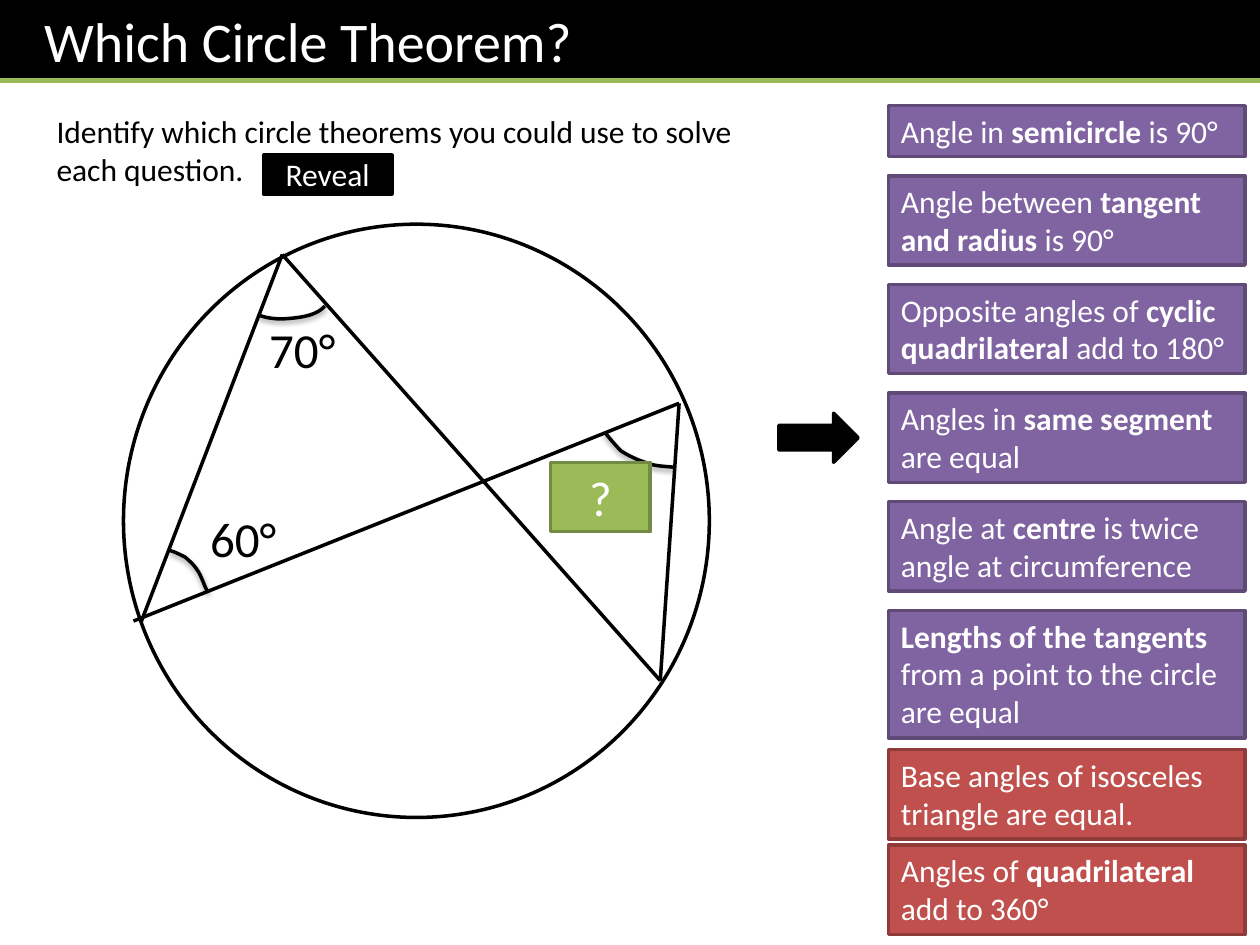
from dataclasses import dataclass

from lxml.etree import SubElement
from pptx import Presentation
from pptx.dml.color import RGBColor
from pptx.enum.shapes import MSO_CONNECTOR, MSO_SHAPE
from pptx.enum.text import MSO_ANCHOR, MSO_AUTO_SIZE, PP_ALIGN
from pptx.oxml.ns import qn
from pptx.util import Cm, Pt


@dataclass(frozen=True)
class Theme:
    font: str = "Calibri"
    black: str = "000000"
    white: str = "FFFFFF"
    green: str = "9BBB59"
    green_edge: str = "738A42"
    purple: str = "8064A2"
    purple_edge: str = "5F4A78"
    red: str = "C0504D"
    red_edge: str = "8E3B39"
    title: int = 32
    label: int = 28
    body: int = 18
    stroke: int = 2


T = Theme()

# Content: runs are (text, bold); lengths are in cm
TITLE = "Which Circle Theorem?"
TASK = "Identify which circle theorems you could use to solve each question."
CIRCLE_THEOREMS = [  # (lines of text, runs)
    (1, [("Angle in ", False), ("semicircle", True), (" is 90°", False)]),
    (2, [("Angle between ", False), ("tangent and radius", True), (" is 90°", False)]),
    (2, [("Opposite angles of ", False), ("cyclic quadrilateral", True),
         (" add to 180°", False)]),
    (2, [("Angles in ", False), ("same segment ", True), ("are equal", False)]),
    (2, [("Angle at ", False), ("centre", True),
         (" is twice angle at circumference", False)]),
    (3, [("Lengths of the tangents ", True),
         ("from a point to the circle are equal", False)]),
]
OTHER_RULES = [
    (2, [("Base angles of isosceles triangle are equal.", False)]),
    (2, [("Angles of ", False), ("quadrilateral", True), (" add to 360°", False)]),
]
THEOREM_GROUPS = [  # (top, gap, fill, edge, theorems)
    (2.13, 0.39, T.purple, T.purple_edge, CIRCLE_THEOREMS),
    (15.11, 0.13, T.red, T.red_edge, OTHER_RULES),
]
BOX_LEFT, BOX_WIDTH = 17.91, 7.19
BOX_PADDING, LINE_HEIGHT = 0.25, 0.775

CIRCLE = (2.49, 4.52, 11.81, 11.96)
TOP, LEFT, RIGHT, BOTTOM = (5.69, 5.13), (2.84, 12.55), (13.69, 8.13), (13.31, 13.72)
CHORDS = [(LEFT, TOP), (RIGHT, (2.69, 12.52)), (BOTTOM, TOP), (BOTTOM, RIGHT)]
ANGLE_LABELS = [("70°", 4.70, 6.32), ("60°", 3.51, 10.13)]
ANGLE_ARCS = [  # chains of cubic curves: start, then two controls and an end each
    [(5.21, 6.35), (5.33, 6.40), (5.49, 6.43), (5.66, 6.43), (5.82, 6.43),
     (6.10, 6.40), (6.25, 6.35), (6.40, 6.30), (6.48, 6.25), (6.55, 6.17)],
    [(3.43, 11.10), (3.53, 11.13), (3.63, 11.18), (3.73, 11.23), (3.81, 11.30),
     (3.91, 11.38), (3.99, 11.51), (4.06, 11.61), (4.11, 11.79), (4.19, 11.94)],
    [(12.19, 8.71), (12.29, 8.84), (12.40, 8.97), (12.52, 9.09), (12.67, 9.19),
     (12.85, 9.27), (13.00, 9.32), (13.18, 9.40), (13.39, 9.40), (13.59, 9.42)],
]


def rgb(color):
    return RGBColor.from_string(color)


def set_line(sp, color, width=T.stroke):
    sp.line.color.rgb = rgb(color)
    sp.line.width = Pt(width)


def add_shape(s, kind, box, fill, edge=None):
    sp = s.shapes.add_shape(kind, *map(Cm, box))
    sp.shadow.inherit = False
    sp.fill.solid()
    sp.fill.fore_color.rgb = rgb(fill)
    if edge:
        set_line(sp, edge)
    else:
        sp.line.fill.background()
    return sp


def write(sp, runs, size, color, align=PP_ALIGN.LEFT, anchor=MSO_ANCHOR.TOP, grow=True):
    tf = sp.text_frame
    tf.word_wrap = True
    tf.vertical_anchor = anchor
    tf.auto_size = MSO_AUTO_SIZE.SHAPE_TO_FIT_TEXT if grow else MSO_AUTO_SIZE.NONE
    p = tf.paragraphs[0]
    p.alignment = align
    for text, bold in runs:
        r = p.add_run()
        r.text = text
        r.font.name = T.font
        r.font.size = Pt(size)
        r.font.bold = bold
        r.font.color.rgb = rgb(color)


def add_text(s, box, text, size, align=PP_ALIGN.LEFT):
    write(s.shapes.add_textbox(*map(Cm, box)), [(text, False)], size, T.black, align)


def add_button(s, box, text, size, fill, edge):
    sp = add_shape(s, MSO_SHAPE.RECTANGLE, box, fill, edge)
    write(sp, [(text, False)], size, T.white, PP_ALIGN.CENTER, MSO_ANCHOR.MIDDLE, False)


def add_line(s, start, end, color, width=T.stroke):
    ln = s.shapes.add_connector(MSO_CONNECTOR.STRAIGHT, *map(Cm, start + end))
    set_line(ln, color, width)
    SubElement(ln._element.spPr, qn("a:effectLst"))


def curve_points(chain, steps=8):
    """Points along a chain of cubic curves."""
    points = [chain[0]]
    for i in range(0, len(chain) - 1, 3):
        for n in range(1, steps + 1):
            t = n / steps
            weights = ((1 - t) ** 3, 3 * t * (1 - t) ** 2, 3 * t * t * (1 - t), t ** 3)
            points.append(tuple(sum(w * q[axis] for w, q in zip(weights, chain[i:i + 4]))
                                for axis in (0, 1)))
    return points


def add_arc(s, chain):
    points = [(Cm(x), Cm(y)) for x, y in curve_points(chain)]
    fb = s.shapes.build_freeform(*points[0])
    fb.add_line_segments(points[1:], close=False)
    sp = fb.convert_to_shape()
    sp.fill.background()
    set_line(sp, T.black)
    sp.shadow.inherit = False
    effects = sp._element.spPr.find(qn("a:effectLst"))
    shadow = SubElement(effects, qn("a:outerShdw"), blurRad="40000", dist="20000",
                        dir="5400000", rotWithShape="0")
    color = SubElement(shadow, qn("a:srgbClr"), val=T.black)
    SubElement(color, qn("a:alpha"), val="38000")


def add_header(s):
    sp = add_shape(s, MSO_SHAPE.RECTANGLE, (0, 0, 25.4, 1.66), T.black)
    sp.text_frame.margin_left = Cm(0.89)
    write(sp, [(TITLE, False)], T.title, T.white)
    add_line(s, (0, 1.63), (25.4, 1.63), T.green, 3)


def add_diagram(s):
    add_shape(s, MSO_SHAPE.OVAL, CIRCLE, T.white, T.black)
    for start, end in CHORDS:
        add_line(s, start, end, T.black)
    for chain in ANGLE_ARCS:
        add_arc(s, chain)
    for text, x, y in ANGLE_LABELS:
        add_text(s, (x, y, 2.79, 1.45), text, T.label, PP_ALIGN.CENTER)
    add_button(s, (11.1, 9.32, 2.01, 1.4), "?", T.label, T.green, T.green_edge)


def add_theorems(s):
    for top, gap, fill, edge, theorems in THEOREM_GROUPS:
        for lines, runs in theorems:
            height = BOX_PADDING + lines * LINE_HEIGHT
            box = (BOX_LEFT, top, BOX_WIDTH, height)
            write(add_shape(s, MSO_SHAPE.RECTANGLE, box, fill, edge),
                  runs, T.body, T.white)
            top += height + gap


def main():
    prs = Presentation()
    prs.slide_width, prs.slide_height = Cm(25.4), Cm(19.05)
    s = prs.slides.add_slide(prs.slide_layouts[6])

    # Header and task
    add_header(s)
    add_text(s, (0.89, 2.13, 15.01, 1.8), TASK, T.body)

    # Circle with its angles, and the arrow to the answer
    add_diagram(s)
    add_shape(s, MSO_SHAPE.RIGHT_ARROW, (15.7, 8.33, 1.6, 0.99), T.black, T.black)

    # Theorem list and reveal button
    add_theorems(s)
    add_button(s, (5.31, 3.12, 2.59, 0.79), "Reveal", T.body, T.black, T.black)

    prs.save("out.pptx")


if __name__ == "__main__":
    main()
